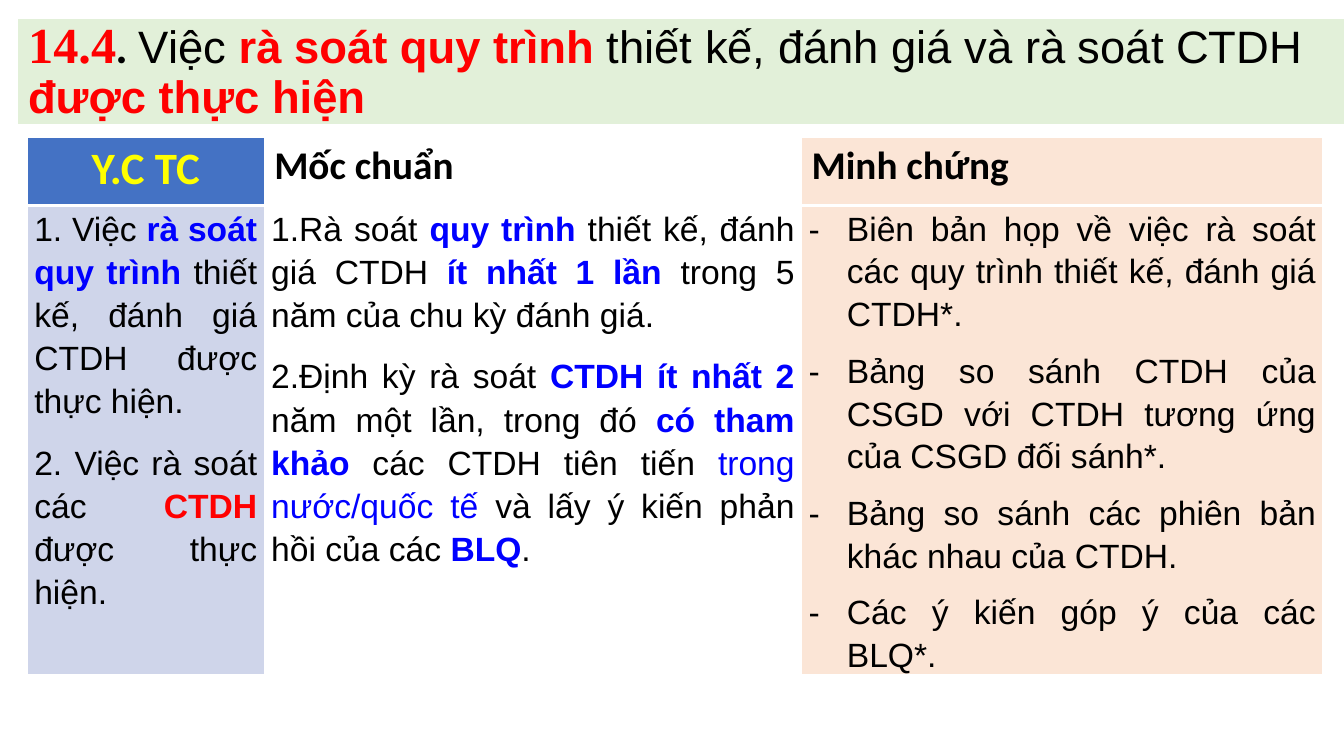
from lxml import etree
from pptx import Presentation
from pptx.dml.color import RGBColor
from pptx.enum.shapes import MSO_SHAPE
from pptx.enum.text import MSO_ANCHOR, PP_ALIGN
from pptx.oxml.ns import qn
from pptx.util import Inches, Pt

RECTANGLE = MSO_SHAPE.RECTANGLE
MIDDLE = MSO_ANCHOR.MIDDLE
LEFT, CENTER, JUSTIFY = PP_ALIGN.LEFT, PP_ALIGN.CENTER, PP_ALIGN.JUSTIFY

COLORS = {
    "black": "000000", "white": "FFFFFF", "red": "FF0000", "yellow": "FFFF00",
    "blue": "0000FF", "header": "4472C4", "lavender": "CFD5EA",
    "peach": "FBE5D6", "green": "E2F0D9",
}


def add_run(paragraph, text, size, font="Arial", color="black", bold=False):
    run = paragraph.add_run()
    run.text = text
    run.font.size = Pt(size)
    run.font.name = font
    run.font.bold = bold
    run.font.color.rgb = RGBColor.from_string(COLORS[color])
    return run


def set_cell_style(cell, fill, bottom_width):
    """Give a cell white borders and a solid fill."""
    properties = cell._tc.get_or_add_tcPr()
    for side, width in (("L", 1), ("R", 1), ("T", 1), ("B", bottom_width)):
        line = etree.SubElement(properties, qn(f"a:ln{side}"), w=str(Pt(width)))
        solid = etree.SubElement(line, qn("a:solidFill"))
        etree.SubElement(solid, qn("a:srgbClr"), val=COLORS["white"])
    cell.fill.solid()
    cell.fill.fore_color.rgb = RGBColor.from_string(COLORS[fill])


presentation = Presentation()
presentation.slide_width = Inches(13.33)
presentation.slide_height = Inches(7.5)
slide = presentation.slides.add_slide(presentation.slide_layouts[6])

# Title band
title = slide.shapes.add_shape(
    RECTANGLE, Inches(0.18), Inches(0.19), Inches(13.15), Inches(1.04))
title.shadow.inherit = False
title.fill.solid()
title.fill.fore_color.rgb = RGBColor.from_string(COLORS["green"])
title.line.fill.background()
title.text_frame.word_wrap = True
title.text_frame.vertical_anchor = MIDDLE
paragraph = title.text_frame.paragraphs[0]
paragraph.alignment = LEFT
paragraph.line_spacing = 0.9
add_run(paragraph, "14.4", 36, "Times New Roman", "red", True)
add_run(paragraph, ". ", 32.4, "Calibri", bold=True).font.italic = True
for text, color, bold in (
    ("Việc ", "black", False),
    ("rà soát quy trình ", "red", True),
    ("thiết kế, đánh giá và rà soát CTDH ", "black", False),
    ("được thực hiện", "red", True),
):
    add_run(paragraph, text, 32.4, color=color, bold=bold)

# Table
COLUMN_WIDTHS = (2.35, 5.33, 5.17)
ROW_HEIGHTS = (0.68, 4.6)
table = slide.shapes.add_table(
    2, 3, Inches(0.27), Inches(1.36),
    Inches(sum(COLUMN_WIDTHS)), Inches(sum(ROW_HEIGHTS))).table
for column, width in zip(table.columns, COLUMN_WIDTHS):
    column.width = Inches(width)
for row, height in zip(table.rows, ROW_HEIGHTS):
    row.height = Inches(height)

HEADERS = (
    ("Y.C TC", 32, "yellow", CENTER, "header"),
    ("Mốc chuẩn", 28, "black", LEFT, "white"),
    ("Minh chứng", 28, "black", LEFT, "peach"),
)
for column, (text, size, color, alignment, fill) in enumerate(HEADERS):
    cell = table.cell(0, column)
    set_cell_style(cell, fill, 3)
    paragraph = cell.text_frame.paragraphs[0]
    paragraph.alignment = alignment
    add_run(paragraph, text, size, "Calibri", color, True)

# Each run is (text, colour, bold); the last two default to black and regular
REQUIREMENTS = (
    (("1. Việc ",), ("rà soát quy trình ", "blue", True),
     ("thiết kế, đánh giá CTDH được thực hiện.",)),
    (("2. Việc rà soát các ",), ("CTDH ", "red", True), ("được thực hiện. ",)),
)
BENCHMARKS = (
    (("1.Rà soát ",), ("quy trình ", "blue", True),
     ("thiết kế, đánh giá CTDH ",), ("ít nhất 1 lần ", "blue", True),
     ("trong 5 năm của chu kỳ đánh giá.",)),
    (("2.Định kỳ rà soát ",), ("CTDH ít nhất 2 ", "blue", True),
     ("năm một lần, trong đó ",), ("có tham khảo", "blue", True),
     (" các CTDH tiên tiến ",), ("trong nước/quốc tế ", "blue"),
     ("và lấy ý kiến phản hồi của các ",), ("BLQ", "blue", True), (".",)),
)
EVIDENCE = (
    (("Biên bản họp về việc rà soát các quy trình thiết kế, đánh giá CTDH*.",),),
    (("Bảng so sánh CTDH của CSGD với CTDH tương ứng của CSGD đối sánh*.",),),
    (("Bảng so sánh các phiên bản khác nhau của CTDH.",),),
    (("Các ý kiến góp ý của các BLQ*.",),),
)
# Content, fill, line spacing, space before each paragraph, bulleted
BODY = (
    (REQUIREMENTS, "lavender", 1.15, (3, 3), False),
    (BENCHMARKS, "white", 1.15, (0, 3), False),
    (EVIDENCE, "peach", 1.14, (0, 0, 0, 0), True),
)
for column, (content, fill, spacing, spaces_before, bulleted) in enumerate(BODY):
    cell = table.cell(1, column)
    set_cell_style(cell, fill, 1)
    cell.margin_left = cell.margin_right = Inches(0.07)
    cell.margin_top = cell.margin_bottom = 0
    for index, (runs, space_before) in enumerate(zip(content, spaces_before)):
        frame = cell.text_frame
        paragraph = frame.add_paragraph() if index else frame.paragraphs[0]
        paragraph.alignment = JUSTIFY
        paragraph.line_spacing = spacing
        paragraph.space_before = Pt(space_before)
        paragraph.space_after = Pt(10)
        if bulleted:
            properties = paragraph._p.get_or_add_pPr()
            properties.set("marL", str(Inches(0.38)))
            properties.set("indent", str(-Inches(0.38)))
            etree.SubElement(properties, qn("a:buFont"), typeface="Arial")
            etree.SubElement(properties, qn("a:buChar"), char="-")
        for run in runs:
            add_run(paragraph, run[0], 24, "Arial", *run[1:])

presentation.save("out.pptx")
